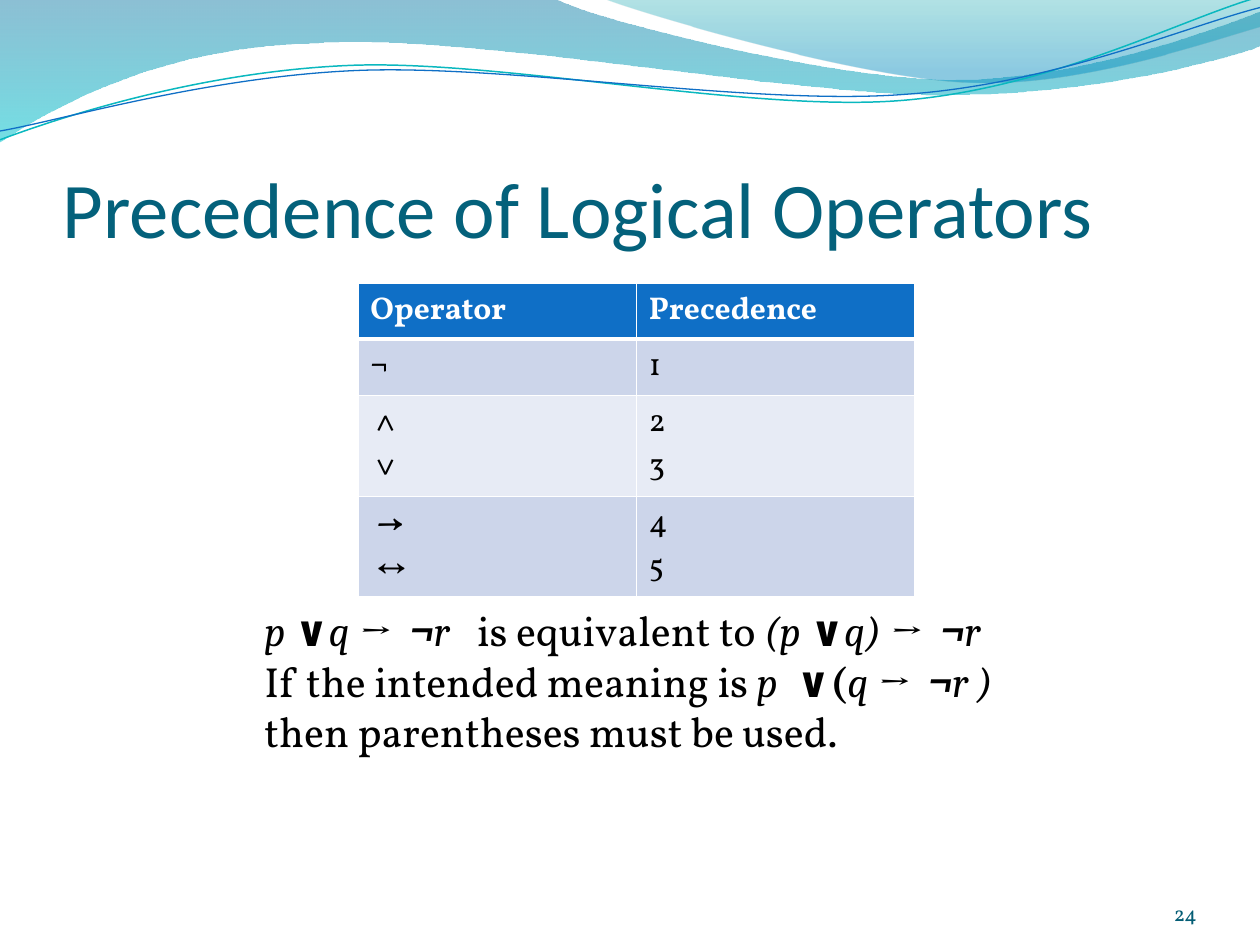
from lxml.etree import SubElement
from pptx import Presentation
from pptx.dml.color import RGBColor
from pptx.enum.text import MSO_ANCHOR, PP_ALIGN
from pptx.oxml.ns import qn
from pptx.util import Inches, Pt

deck = Presentation()
deck.slide_width, deck.slide_height = Inches(10), Inches(7.5)
grid = deck.slide_width // 10
slide = deck.slides.add_slide(deck.slide_layouts[6])
rgb = RGBColor.from_string


def draw_wave(start, segments, closed):
    points = [(round(segment[i] * 100), round(segment[i + 1] * 100))
              for segment in [start, *segments] for i in range(0, len(segment), 2)]
    builder = slide.shapes.build_freeform(*points[0], scale=grid / 100)
    builder.add_line_segments(points[1:], close=closed)
    wave = builder.convert_to_shape()
    wave.shadow.inherit = False
    outline = next(wave.element.iter(qn("a:path")))
    steps = iter(outline.findall(qn("a:lnTo")))
    for segment in segments:
        bend = [next(steps) for _ in range(len(segment) // 2)]
        if len(bend) == 3:
            curve = outline.makeelement(qn("a:cubicBezTo"))
            bend[0].addprevious(curve)
            for step in bend:
                curve.append(step[0])
                outline.remove(step)
    return wave


def add_text_area(left, top, width, height, insets, anchor):
    area = slide.shapes.add_textbox(*[round(v * grid) for v in (left, top, width, height)])
    frame = area.text_frame
    frame.word_wrap = True
    frame.vertical_anchor = anchor
    (frame.margin_left, frame.margin_top,
     frame.margin_right, frame.margin_bottom) = [Inches(v) for v in insets]
    return frame


bands = [
    ((0, 0), [(4.4, -0.01), (4.76, 0.17, 6.64, 0.63, 7.58, 0.63),
              (8.53, 0.63, 9.58, 0.26, 10, 0.09), (10.01, 0.36),
              (9.83, 0.44, 8.7, 0.76, 7.46, 0.75), (6.22, 0.75, 3.82, 0.28, 2.57, 0.34),
              (1.29, 0.36, 0.46, 0.83, -0.01, 1.13)],
     [(0, "0074A1", 45), (1, "00C6CF", 55)]),
    ((4.79, -0.01), [(5.09, 0.11, 6.82, 0.62, 7.69, 0.65),
                     (8.56, 0.69, 9.61, 0.32, 10, 0.21), (10, 0)],
     [(0, "00A1A9", 30), (0.8, "008BBF", 45)]),
]
for start, segments, stops in bands:
    band = draw_wave(start, segments, True)
    band.line.fill.background()
    band.fill.gradient()
    band.fill.gradient_angle = 270
    for stop, (position, color, _) in zip(band.fill.gradient_stops, stops):
        stop.position = position
        stop.color.rgb = rgb(color)
    for color_node, (_, _, opacity) in zip(band.element.spPr.iter(qn("a:srgbClr")), stops):
        SubElement(color_node, qn("a:alpha"), val=str(opacity * 1000))

strands = [
    ((0, 1.11), [(0.48, 0.93, 1.58, 0.57, 2.77, 0.52), (3.95, 0.47, 5.93, 0.89, 7.13, 0.8),
                 (8.33, 0.71, 9.38, 0.15, 9.98, -0.02)], "0AB8BF", 0.85),
    ((0, 1.04), [(0.47, 0.96, 1.64, 0.61, 2.83, 0.56), (4.03, 0.51, 5.97, 0.84, 7.17, 0.75),
                 (8.36, 0.67, 9.41, 0.21, 10, 0.06)], "0F6FC6", 0.75),
]
for start, segments, color, weight in strands:
    strand = draw_wave(start, segments, False)
    strand.fill.background()
    strand.line.color.rgb = rgb(color)
    strand.line.width = Pt(weight)

labels = [
    ("Precedence of Logical Operators", (0.5, 0.77, 9, 1.25), (0, 0.05, 0, 0),
     "Calibri", 45, "04617B", PP_ALIGN.LEFT),
    ("24", (8.67, 6.95, 0.83, 0.4), (0, 0, 0, 0), "Vollkorn", 12, "045D75", PP_ALIGN.RIGHT),
]
for wording, place, insets, font_name, size, color, align in labels:
    label = add_text_area(*place, insets, MSO_ANCHOR.BOTTOM).paragraphs[0]
    label.text = wording
    label.alignment = align
    label.font.name, label.font.size = font_name, Pt(size)
    label.font.color.rgb = rgb(color)

precedence_rows = [
    (0.44, "0F6FC6", "Operator", "Precedence"),
    (0.45, "CCD5EA", "¬", "1"),
    (0.8, "E7EBF5", " ∧\n ∨", "2\n3"),
    (0.8, "CCD5EA", " →\n ↔", "4\n5"),
]
table_height = sum(row[0] for row in precedence_rows)
precedence = slide.shapes.add_table(
    len(precedence_rows), 2,
    *[round(v * grid) for v in (2.84, 2.25, 4.42, table_height)]).table
for row_index, (height, fill, *wordings) in enumerate(precedence_rows):
    precedence.rows[row_index].height = round(height * grid)
    for column_index, wording in enumerate(wordings):
        cell = precedence.cell(row_index, column_index)
        cell.text = wording
        for entry in cell.text_frame.paragraphs:
            entry.font.name, entry.font.size = "Vollkorn", Pt(18)
            entry.font.bold = row_index == 0 or (column_index == 0 and entry.text != " ↔")
            entry.font.color.rgb = rgb("000000" if row_index else "FFFFFF")
        borders = cell._tc.get_or_add_tcPr()
        for side in ("lnL", "lnR", "lnT", "lnB"):
            thick = (row_index, side) in ((0, "lnB"), (1, "lnT"))
            border = SubElement(borders, qn(f"a:{side}"), w=str(Pt(3 if thick else 1)))
            SubElement(SubElement(border, qn("a:solidFill")), qn("a:srgbClr"), val="FFFFFF")
        cell.fill.solid()
        cell.fill.fore_color.rgb = rgb(fill)

explanation = [
    [("p ", "i"), ("∨", "b"), ("q ", "i"), ("→", "bi"), (" ", "w"), ("¬", "bi"), ("r", "i"),
     (" ", "ww"), ("is equivalent to ", "v"), ("(p ", "i"), ("∨", "b"), ("q)", "i"),
     (" →", "bi"), (" ", "w"), ("¬", "bi"), ("r", "i")],
    [("If the intended meaning is ", "v"), ("p", "i"), (" ", "w"), ("∨(", "b"), ("q ", "i"),
     ("→", "bi"), (" ", "w"), ("¬", "bi"), ("r )", "i")],
    [("then parentheses must be used.", "v")],
]
remarks = add_text_area(2, 4.75, 6.25, 2.12, (0.1, 0.05, 0.1, 0.05), MSO_ANCHOR.TOP)
for index, pieces in enumerate(explanation):
    remark = remarks.paragraphs[0] if index == 0 else remarks.add_paragraph()
    remark.font.size = Pt(24)
    remark.font.color.rgb = rgb("000000")
    for wording, style in pieces:
        piece = remark.add_run()
        piece.text = wording
        piece.font.name = "Vollkorn" if "v" in style else "Cambria"
        piece.font.bold, piece.font.italic = "b" in style, "i" in style
        if "w" in style:
            piece.font._element.set("spc", str(530 * style.count("w")))

deck.save("out.pptx")
